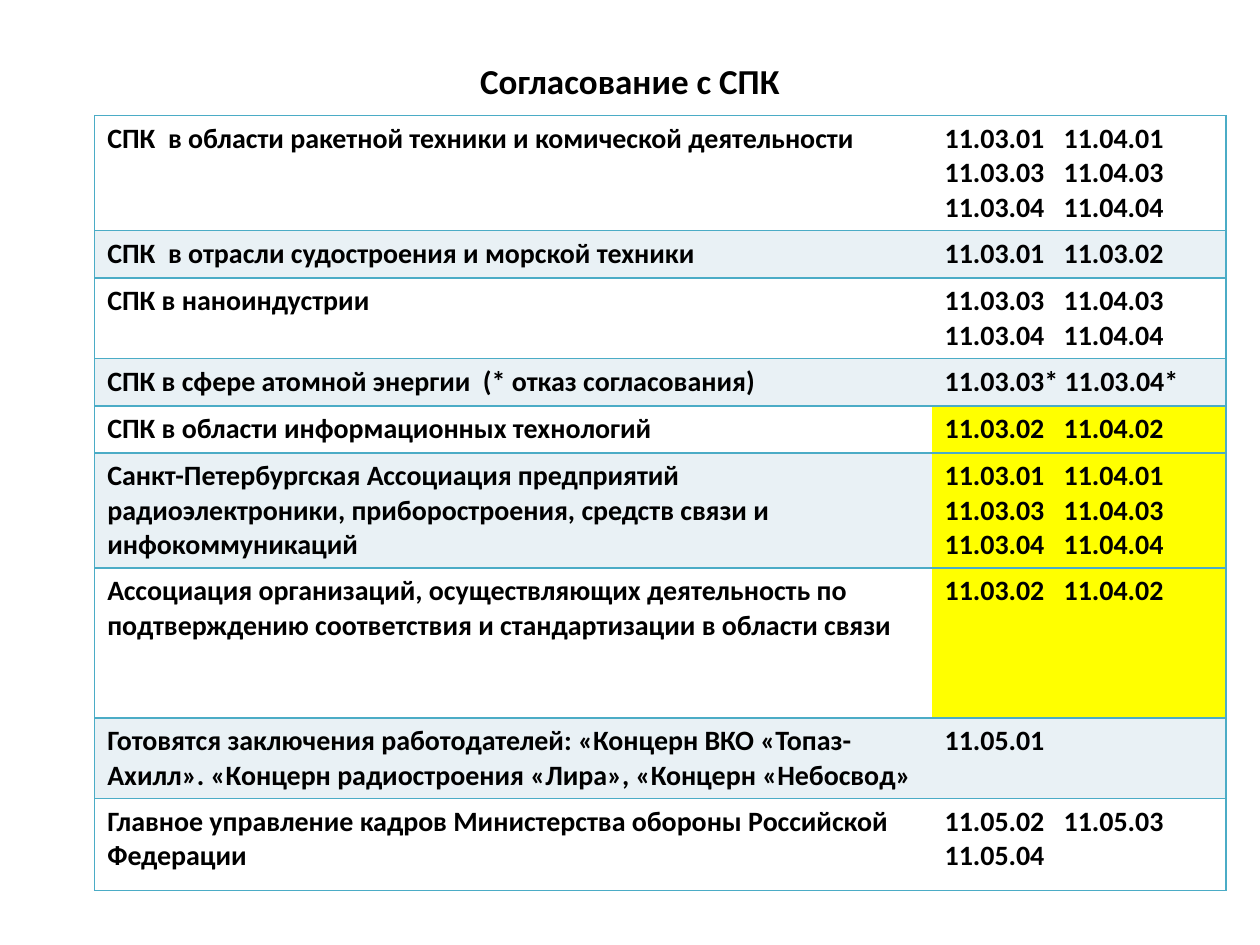
from lxml.etree import SubElement
from pptx import Presentation
from pptx.dml.color import RGBColor
from pptx.enum.text import MSO_ANCHOR, PP_ALIGN
from pptx.oxml import parse_xml
from pptx.oxml.ns import nsdecls, qn
from pptx.util import Cm, Pt

BLACK = RGBColor(0x00, 0x00, 0x00)
WHITE = RGBColor(0xFF, 0xFF, 0xFF)
PALE = RGBColor(0xE9, 0xF1, 0xF5)
YELLOW = RGBColor(0xFF, 0xFF, 0x00)
TEAL = RGBColor(0x4B, 0xAC, 0xC6)

TITLE_FONT = {"name": "Calibri", "size": Pt(20), "bold": True}
CELL_FONT = {"name": "Calibri", "size": Pt(16), "bold": True}
COL_SHARES = (0.74, 0.26)
CODE_TAB = Cm(2.4)

ROWS = [
    ("СПК  в области ракетной техники и комической деятельности",
     ["11.03.01\t11.04.01", "11.03.03\t11.04.03", "11.03.04\t11.04.04"], 2.32, False),
    ("СПК  в отрасли судостроения и морской техники",
     ["11.03.01\t11.03.02"], 0.95, False),
    ("СПК в наноиндустрии",
     ["11.03.03\t11.04.03", "11.03.04\t11.04.04"], 1.63, False),
    ("СПК в сфере атомной энергии  (* отказ согласования)",
     ["11.03.03* 11.03.04*"], 0.95, False),
    ("СПК в области информационных технологий",
     ["11.03.02\t11.04.02"], 0.95, True),
    ("Санкт-Петербургская Ассоциация предприятий радиоэлектроники, "
     "приборостроения, средств связи и инфокоммуникаций",
     ["11.03.01\t11.04.01", "11.03.03\t11.04.03", "11.03.04\t11.04.04"], 2.32, True),
    ("Ассоциация организаций, осуществляющих деятельность по "
     "подтверждению соответствия и стандартизации в области связи",
     ["11.03.02\t11.04.02"], 3.02, True),
    ("Готовятся заключения работодателей: «Концерн ВКО «Топаз-Ахилл». "
     "«Концерн радиостроения «Лира», «Концерн «Небосвод»",
     ["11.05.01"], 1.63, False),
    ("Главное управление кадров Министерства обороны Российской Федерации",
     ["11.05.02\t11.05.03", "11.05.04"], 1.85, False),
]


def write(p, text, fmt):
    r = p.add_run()
    r.text = text
    for key, value in fmt.items():
        setattr(r.font, key, value)
    r.font.color.rgb = BLACK


def add_tab(p):
    tabs = SubElement(p._p.get_or_add_pPr(), qn("a:tabLst"))
    SubElement(tabs, qn("a:tab"), pos=str(CODE_TAB), algn="l")


def set_borders(cell, visible):
    tcPr = cell._tc.get_or_add_tcPr()
    for i, side in enumerate("LRTB"):
        fill = (f'<a:solidFill><a:srgbClr val="{TEAL}"/></a:solidFill>'
                if side in visible else "<a:noFill/>")
        tcPr.insert(i, parse_xml(
            f'<a:ln{side} {nsdecls("a")} w="{Pt(1)}">{fill}</a:ln{side}>'))


def fill_cell(cell, lines, color, borders):
    cell.fill.solid()
    cell.fill.fore_color.rgb = color
    set_borders(cell, borders)
    tf = cell.text_frame
    for i, line in enumerate(lines):
        p = tf.paragraphs[0] if i == 0 else tf.add_paragraph()
        if "\t" in line:
            add_tab(p)
        write(p, line, CELL_FONT)


def add_title(s, x, y, w, h):
    tf = s.shapes.add_textbox(x, y, w, h).text_frame
    for key, value in {"word_wrap": True, "vertical_anchor": MSO_ANCHOR.MIDDLE}.items():
        setattr(tf, key, value)
    p = tf.paragraphs[0]
    p.alignment = PP_ALIGN.CENTER
    write(p, "Согласование с СПК", TITLE_FONT)


def add_approvals(s, x, y, w, h):
    table = s.shapes.add_table(len(ROWS), len(COL_SHARES), x, y, w, h).table
    table.first_row = table.horz_banding = False
    for col, share in zip(table.columns, COL_SHARES):
        col.width = int(w * share)
    total = sum(row[2] for row in ROWS)
    for i, (council, codes, height, marked) in enumerate(ROWS):
        table.rows[i].height = int(h * height / total)
        band = PALE if i % 2 else WHITE
        fill_cell(table.cell(i, 0), [council], band, "LTB")
        fill_cell(table.cell(i, 1), codes, YELLOW if marked else band, "RTB")


def main():
    prs = Presentation()
    prs.slide_width, prs.slide_height = Cm(25.4), Cm(19.05)
    s = prs.slides.add_slide(prs.slide_layouts[6])
    add_title(s, Cm(1.27), Cm(0.92), Cm(22.86), Cm(1.4))
    add_approvals(s, Cm(1.91), Cm(2.33), Cm(22.81), Cm(15.62))
    prs.save("out.pptx")


if __name__ == "__main__":
    main()
